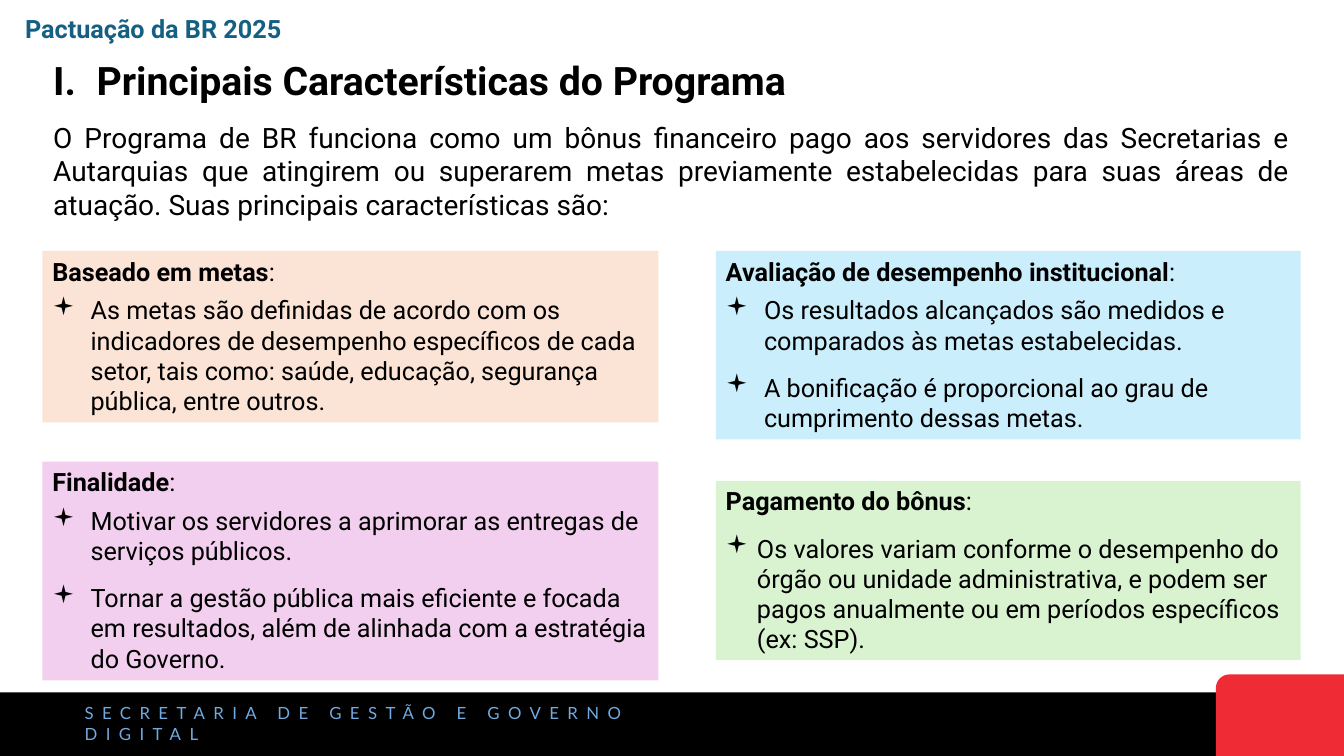
from pptx import Presentation, util as u
from pptx.dml.color import RGBColor
from pptx.enum import shapes, text
from pptx.oxml.ns import qn
from lxml import etree

COLORS = {
    "black": "000000", "red": "EF2C35", "footer": "71AAE0", "header": "156082",
    "peach": "FBE3D6", "sky": "CAEEFB", "green": "D9F2D0", "pink": "F2CFEE",
}
LEFT, RIGHT = (0.42, 6.11), (7.1, 5.8)  # column left edge and width

# column, top, height, fill, heading, space after heading, bullet indent, bullets
CARDS = [
    (LEFT, 2.49, 1.7, "peach", "Baseado em metas", 0, 0.38, [
        "As metas são definidas de acordo com os indicadores de desempenho específicos "
        "de cada setor, tais como: saúde, educação, segurança pública, entre outros."]),
    (RIGHT, 2.49, 1.87, "sky", "Avaliação de desempenho institucional", 0, 0.38, [
        "Os resultados alcançados são medidos e comparados às metas estabelecidas.",
        "A bonificação é proporcional ao grau de cumprimento dessas metas."]),
    (RIGHT, 4.77, 1.78, "green", "Pagamento do bônus", 6, 0.31, [
        "Os valores variam conforme o desempenho do órgão ou unidade administrativa, "
        "e podem ser pagos anualmente ou em períodos específicos (ex: SSP)."]),
    (LEFT, 4.58, 2.17, "pink", "Finalidade", 0, 0.38, [
        "Motivar os servidores a aprimorar as entregas de serviços públicos.",
        "Tornar a gestão pública mais eficiente e focada em resultados, além de alinhada "
        "com a estratégia do Governo."]),
]


def rgb(name):
    return RGBColor.from_string(COLORS[name])


def add_block(s, kind, x, y, w, h, fill):
    sp = s.shapes.add_shape(kind, u.Inches(x), u.Inches(y), u.Inches(w), u.Inches(h))
    sp.shadow.inherit = False
    sp.fill.solid()
    sp.fill.fore_color.rgb = rgb(fill)
    sp.line.fill.background()
    return sp


def set_frame(sp, anchor=text.MSO_ANCHOR.TOP):
    tf = sp.text_frame
    tf.word_wrap = True
    tf.auto_size = text.MSO_AUTO_SIZE.SHAPE_TO_FIT_TEXT
    tf.vertical_anchor = anchor
    tf.paragraphs[0].alignment = text.PP_ALIGN.LEFT
    return tf


def add_text_box(s, x, y, w, h, anchor=text.MSO_ANCHOR.TOP):
    sp = s.shapes.add_textbox(u.Inches(x), u.Inches(y), u.Inches(w), u.Inches(h))
    return set_frame(sp, anchor)


def add_run(p, words, size, bold=False, color="black", font="Roboto"):
    r = p.add_run()
    r.text = words
    r.font.size = u.Pt(size)
    r.font.bold = bold
    r.font.name = font
    r.font.color.rgb = rgb(color)
    return r


def set_hanging(p, indent):
    pPr = p._p.get_or_add_pPr()
    pPr.set("marL", str(u.Inches(indent)))
    pPr.set("indent", str(-u.Inches(indent)))
    return pPr


def add_bullet(tf, words, indent):
    p = tf.add_paragraph()
    p.alignment = text.PP_ALIGN.LEFT
    p.space_before = p.space_after = u.Pt(6)
    pPr = set_hanging(p, indent)
    etree.SubElement(pPr, qn("a:buFont"), typeface="Wingdings")
    etree.SubElement(pPr, qn("a:buChar"), char="▪")
    add_run(p, words, 18)


def add_card(s, column, top, height, fill, heading, after, indent, bullets):
    x, w = column
    tf = set_frame(add_block(s, shapes.MSO_SHAPE.RECTANGLE, x, top, w, height, fill))
    p = tf.paragraphs[0]
    p.space_after = u.Pt(after)
    add_run(p, heading, 18, bold=True)
    add_run(p, ":", 18)
    for words in bullets:
        add_bullet(tf, words, indent)


def add_footer(s):
    add_block(s, shapes.MSO_SHAPE.RECTANGLE, 0, 6.87, 13.33, 0.63, "black")
    corner = add_block(s, shapes.MSO_SHAPE.ROUND_1_RECTANGLE, 12.06, 6.69, 1.27, 0.81, "red")
    corner._element.spPr.xfrm.set("flipH", "1")
    tf = add_text_box(s, 0.78, 7.02, 6.56, 0.31, text.MSO_ANCHOR.MIDDLE)
    tf.margin_left = tf.margin_right = tf.margin_top = tf.margin_bottom = u.Inches(0.06)
    r = add_run(tf.paragraphs[0], "SECRETARIA DE GESTÃO E GOVERNO DIGITAL", 12,
                color="footer", font="Lato")
    r.font._element.set("spc", "600")


def add_intro(s):
    tf = add_text_box(s, 0.43, 0.51, 12.46, 1.75)
    p = tf.paragraphs[0]
    p.space_after = u.Pt(12)
    set_hanging(p, 0.43)
    add_run(p, "I.\tPrincipais Características do Programa", 28, bold=True)
    p = tf.add_paragraph()
    p.alignment = text.PP_ALIGN.JUSTIFY
    add_run(p, "O Programa de BR funciona como um bônus financeiro pago aos servidores das "
               "Secretarias e Autarquias que atingirem ou superarem metas previamente "
               "estabelecidas para suas áreas de atuação. Suas principais características "
               "são:", 20)


def main():
    prs = Presentation()
    prs.slide_width, prs.slide_height = u.Inches(13.33), u.Inches(7.5)
    s = prs.slides.add_slide(prs.slide_layouts[6])
    add_footer(s)
    add_intro(s)
    for card in CARDS:
        add_card(s, *card)
    tf = add_text_box(s, 0.15, 0.08, 6.67, 0.4)
    add_run(tf.paragraphs[0], "Pactuação da BR 2025", 18, bold=True, color="header")
    prs.save("out.pptx")


if __name__ == "__main__":
    main()
